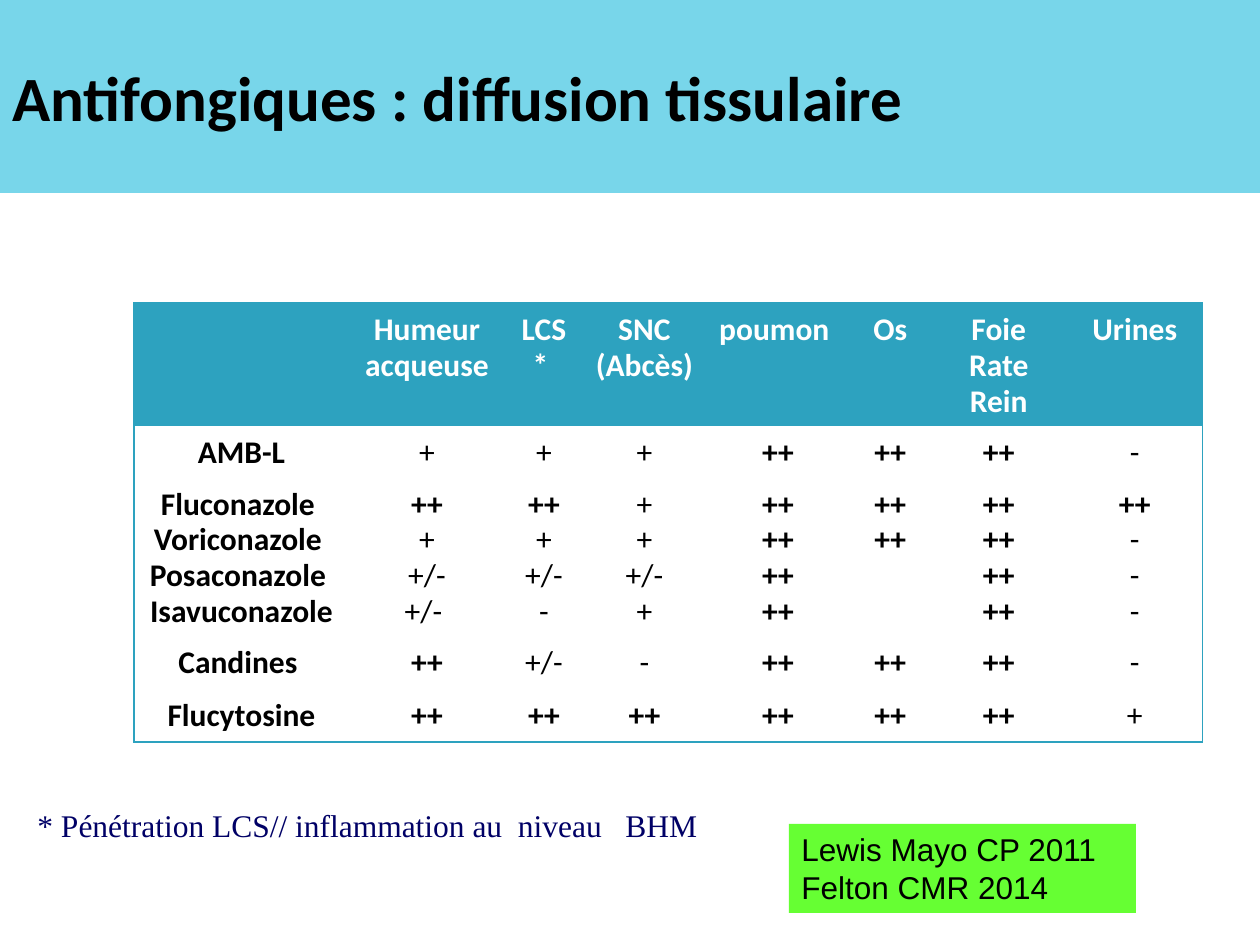
from lxml.etree import SubElement
from pptx import Presentation
from pptx.dml.color import RGBColor
from pptx.enum.text import MSO_ANCHOR, PP_ALIGN
from pptx.oxml.ns import qn
from pptx.util import Emu, Pt

PX = 914400 // 126
COLORS = {"band": "78D6EA", "teal": "2DA2BF", "green": "66FF33",
          "navy": "000066", "black": "000000", "white": "FFFFFF"}
NO_STYLE = "{2D5ABB26-0587-4C30-8999-92F81FD0307C}"

TITLE = "Antifongiques : diffusion tissulaire"
NOTE = "* Pénétration LCS// inflammation au  niveau   BHM"
SOURCES = "Lewis Mayo CP 2011\nFelton CMR 2014"
ROWS = [
    ["", "Humeur\nacqueuse ", "LCS* ", "SNC\n(Abcès)", "poumon ", "Os",
     "Foie\nRate\nRein", "Urines"],
    ["AMB-L", "+", "+", "+", "++", "++", "++", "-"],
    ["Fluconazole \nVoriconazole \nPosaconazole \nIsavuconazole",
     "++\n+\n+/-\n+/- ", "++\n+\n+/-\n-", "+\n+\n+/-\n+", "++\n++\n++\n++",
     "++\n++", "++\n++\n++\n++", "++\n-\n-\n-"],
    ["Candines ", "++", "+/-", "-", "++", "++", "++", "-"],
    ["Flucytosine", "++", "++", "++", "++", "++", "++", "+"],
]
COL_WIDTHS = [215, 156, 78, 123, 144, 81, 136, 136]
ROW_HEIGHTS = [120, 52, 156, 53, 53]


def px(*values):
    return [Emu(v * PX) for v in values]


def rgb(name):
    return RGBColor.from_string(COLORS[name])


def style(p, font, size, color, bold=False):
    for r in p.runs:
        r.font.name = font
        r.font.size = Pt(size)
        r.font.bold = bold
        r.font.color.rgb = rgb(color)


def add_note(s, box, text, font, color, fill=None):
    sp = s.shapes.add_textbox(*px(*box))
    if fill:
        sp.fill.solid()
        sp.fill.fore_color.rgb = rgb(fill)
    tf = sp.text_frame
    tf.word_wrap = True
    tf.text = text
    for p in tf.paragraphs:
        style(p, font, 18, color)


def add_borders(cell, sides):
    tc_pr = cell._tc.get_or_add_tcPr()
    for i, side in enumerate(sides):
        ln = SubElement(tc_pr, qn(f"a:ln{side}"), w=str(Pt(0.75)))
        fill = SubElement(ln, qn("a:solidFill"))
        SubElement(fill, qn("a:srgbClr"), val=COLORS["teal"])
        tc_pr.insert(i, ln)


def fill_cell(cell, text, row, col):
    cell.margin_top = Emu(9 * PX)
    if row == 0:
        cell.fill.solid()
        cell.fill.fore_color.rgb = rgb("teal")
    else:
        cell.fill.background()
    cell.text_frame.text = text
    for p in cell.text_frame.paragraphs:
        p.alignment = PP_ALIGN.CENTER
        p.line_spacing = 0.93
        bold = row == 0 or col == 0 or p.text == "++"
        style(p, "Calibri", 18, "black" if row else "white", bold)
    edges = {"L": col == 0, "R": col == len(COL_WIDTHS) - 1,
             "T": row == 0, "B": row == len(ROWS) - 1}
    add_borders(cell, [side for side, outer in edges.items() if outer])


def add_diffusion_table(s):
    box = px(134, 303, sum(COL_WIDTHS), sum(ROW_HEIGHTS))
    table = s.shapes.add_table(len(ROWS), len(COL_WIDTHS), *box).table
    table.horz_banding = False
    table._tbl.tblPr.find(qn("a:tableStyleId")).text = NO_STYLE
    for column, width in zip(table.columns, px(*COL_WIDTHS)):
        column.width = width
    for row, height in zip(table.rows, px(*ROW_HEIGHTS)):
        row.height = height
    for i, texts in enumerate(ROWS):
        for j, text in enumerate(texts):
            fill_cell(table.cell(i, j), text, i, j)


def add_title(s):
    sp = s.shapes.title
    sp.left, sp.top, sp.width, sp.height = px(0, 0, 1260, 193)
    sp.fill.solid()
    sp.fill.fore_color.rgb = rgb("band")
    tf = sp.text_frame
    tf.text = TITLE
    tf.vertical_anchor = MSO_ANCHOR.MIDDLE
    tf.paragraphs[0].alignment = PP_ALIGN.LEFT
    style(tf.paragraphs[0], "Calibri", 36, "black", True)


def main():
    prs = Presentation()
    prs.slide_width, prs.slide_height = px(1260, 945)
    s = prs.slides.add_slide(prs.slide_layouts[5])
    add_title(s)
    add_diffusion_table(s)
    add_note(s, (25, 800, 764, 51), NOTE, "Times New Roman", "navy")
    add_note(s, (789, 824, 347, 89), SOURCES, "Arial", "black", "green")
    prs.save("out.pptx")


if __name__ == "__main__":
    main()
